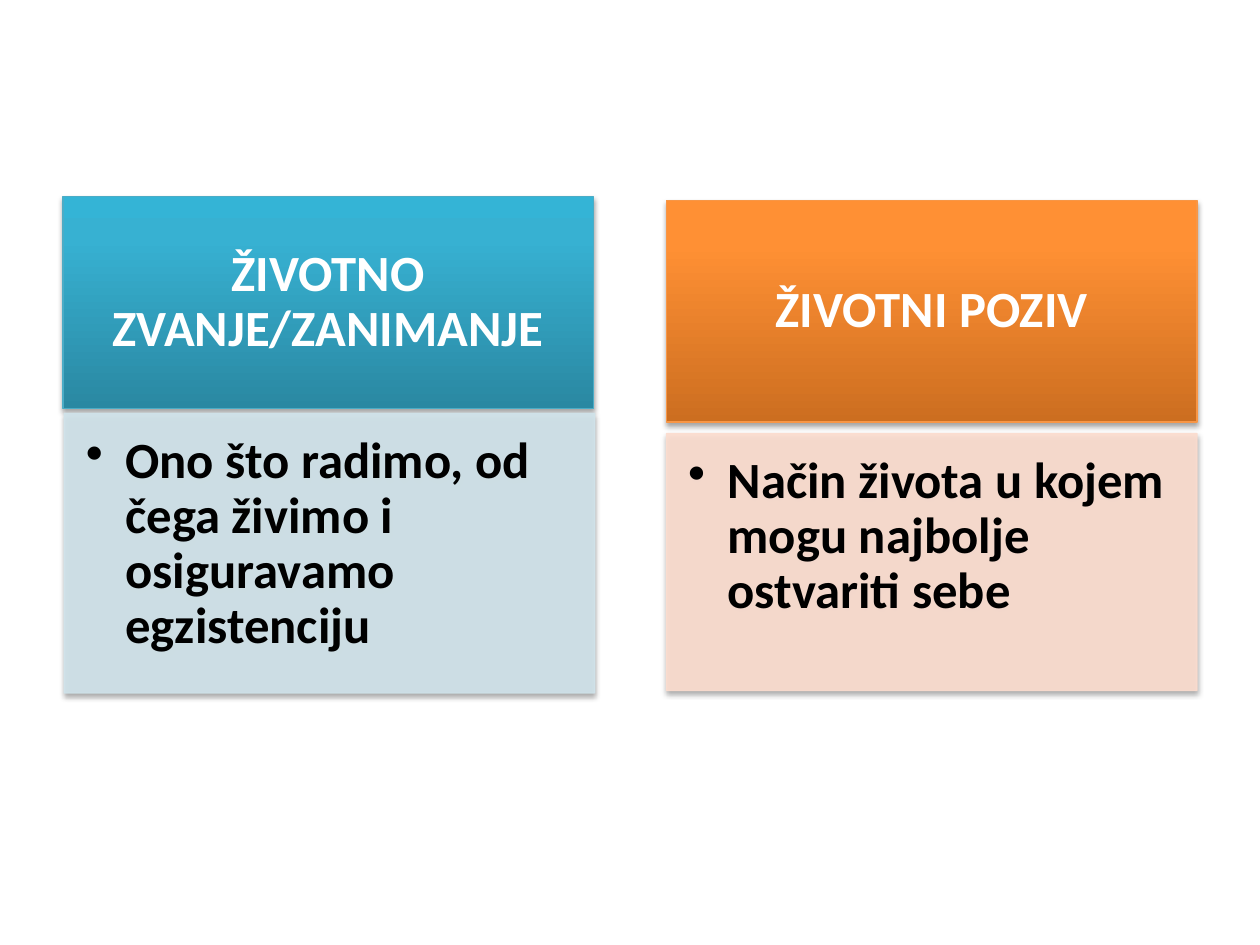
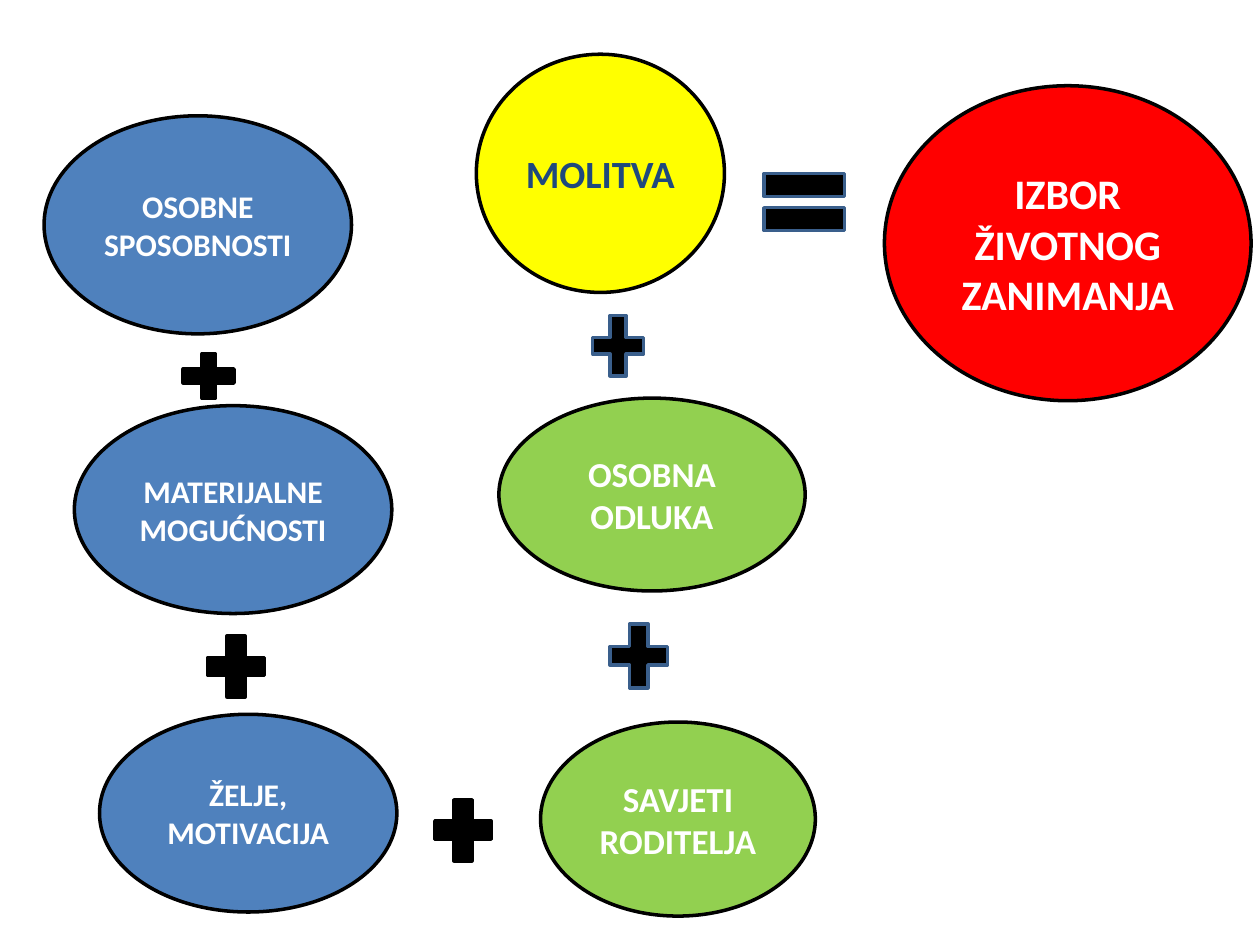
from pptx import Presentation
from pptx.dml.color import RGBColor
from pptx.enum.shapes import MSO_SHAPE
from pptx.enum.text import MSO_ANCHOR, PP_ALIGN
from pptx.oxml import parse_xml
from pptx.oxml.ns import nsdecls, qn
from pptx.util import Pt

RECTANGLE, OVAL = MSO_SHAPE.RECTANGLE, MSO_SHAPE.OVAL
PLUS, EQUAL = MSO_SHAPE.MATH_PLUS, MSO_SHAPE.MATH_EQUAL
TOP, MIDDLE = MSO_ANCHOR.TOP, MSO_ANCHOR.MIDDLE
LEFT, CENTER = PP_ALIGN.LEFT, PP_ALIGN.CENTER

FONT = "Calibri"
WHITE, BLACK, NAVY = "FFFFFF", "000000", "1F497D"
BLUE, GREEN, YELLOW, RED = "4F81BD", "92D050", "FFFF00", "FF0000"
SIGN_BLUE = "3A5F8C"


def color(value):
    return RGBColor.from_string(value)


def add_box(page, kind, place, fill, line, width, text="", size=18,
            ink=WHITE, align=CENTER, anchor=MIDDLE):
    box = page.shapes.add_shape(kind, *[Pt(length) for length in place])
    box.shadow.inherit = False
    box.fill.solid()
    box.fill.fore_color.rgb = color(fill)
    box.line.color.rgb = color(line)
    box.line.width = Pt(width)
    if text:
        frame = box.text_frame
        frame.word_wrap = True
        frame.vertical_anchor = anchor
        para = frame.paragraphs[0]
        para.alignment = align
        span = para.add_run()
        span.text = text
        span.font.color.rgb = color(ink)
        for name, value in {"name": FONT, "size": Pt(size), "bold": True}.items():
            setattr(span.font, name, value)
    return box


deck = Presentation()
deck.slide_width, deck.slide_height = Pt(720), Pt(540)
blank = deck.slide_layouts[6]

# Slide 1: two headed cards
page = deck.slides.add_slide(blank)
CARD_WIDTH = 303.1
HEADER_INSETS = {"margin_left": 16.5, "margin_top": 9.4,
                 "margin_right": 16.5, "margin_bottom": 9.4}
BODY_INSETS = {"margin_left": 12.4, "margin_top": 12.4,
               "margin_right": 16.5, "margin_bottom": 18.6}
cards = [
    {"header": (36, 112.3, CARD_WIDTH, 121), "body": (36.7, 236.2, CARD_WIDTH, 159.8),
     "title": "ŽIVOTNO ZVANJE/ZANIMANJE",
     "text": "Ono što radimo, od čega živimo i osiguravamo egzistenciju",
     "stops": ("2A88A2", "37B1D2", "34B4D6"), "line": "4BACC6", "tint": "D0E3EA"},
    {"header": (380.9, 114.5, CARD_WIDTH, 126.7), "body": (380.9, 247.7, CARD_WIDTH, 146.9),
     "title": "ŽIVOTNI POZIV",
     "text": "Način života u kojem mogu najbolje ostvariti sebe",
     "stops": ("CC6E20", "FF9034", "FF9136"), "line": "F79646", "tint": "FCDDCF"},
]
for card in cards:
    header = add_box(page, RECTANGLE, card["header"], card["stops"][0], card["line"],
                     0.75, card["title"], 29)
    body = add_box(page, RECTANGLE, card["body"], card["tint"], card["tint"],
                   0.75, card["text"], 29, BLACK, LEFT, TOP)

    # Insets, line spacing and soft shadow
    for box, insets in ((header, HEADER_INSETS), (body, BODY_INSETS)):
        for name, value in insets.items():
            setattr(box.text_frame, name, Pt(value))
        box.text_frame.paragraphs[0].line_spacing = 0.9
        box._element.spPr.find(qn("a:effectLst")).append(parse_xml(
            f'<a:outerShdw {nsdecls("a")} blurRad="{Pt(3.1)}" dist="{Pt(1.8)}" '
            'dir="5400000" rotWithShape="0"><a:srgbClr val="000000">'
            '<a:alpha val="35000"/></a:srgbClr></a:outerShdw>'))

    # Header gradient, dark at the bottom
    stops = "".join(f'<a:gs pos="{position}"><a:srgbClr val="{value}"/></a:gs>'
                    for position, value in zip((0, 80000, 100000), card["stops"]))
    properties = header._element.spPr
    properties.replace(properties.find(qn("a:solidFill")), parse_xml(
        f'<a:gradFill {nsdecls("a")} rotWithShape="1"><a:gsLst>{stops}</a:gsLst>'
        '<a:lin ang="16200000" scaled="0"/></a:gradFill>'))

    # Body transparency and bullet
    for tint in body._element.spPr.iter(qn("a:srgbClr")):
        if tint.get("val") == card["tint"]:
            tint.append(parse_xml(f'<a:alpha {nsdecls("a")} val="90000"/>'))
    bullet = body.text_frame.paragraphs[0]._p.get_or_add_pPr()
    bullet.set("marL", str(Pt(22.5)))
    bullet.set("indent", str(-Pt(22.5)))
    bullet.append(parse_xml(f'<a:buChar {nsdecls("a")} char="•"/>'))

# Slide 2: what adds up to the choice of an occupation
page = deck.slides.add_slide(blank)
factors = [
    ("OSOBNE SPOSOBNOSTI", (25.2, 66.2, 175.7, 124.6), BLUE, 18, WHITE),
    ("MATERIJALNE MOGUĆNOSTI", (42.5, 231.8, 181.4, 118.8), BLUE, 18, WHITE),
    ("ŽELJE, MOTIVACIJA", (56.9, 408.2, 169.9, 113), BLUE, 18, WHITE),
    ("SAVJETI RODITELJA", (308.9, 412.6, 157, 110.9), GREEN, 20, WHITE),
    ("OSOBNA ODLUKA", (285.1, 227.5, 175, 110.2), GREEN, 20, WHITE),
    ("MOLITVA", (272.2, 31, 141.8, 136.1), YELLOW, 22, NAVY),
    ("IZBOR ŽIVOTNOG ZANIMANJA", (505.4, 49, 209.5, 180), RED, 24, WHITE),
]
for text, place, fill, size, ink in factors:
    add_box(page, OVAL, place, fill, BLACK, 2, text, size, ink)

# Signs between the ovals
signs = [
    (PLUS, (99.4, 198, 39.6, 33.8), BLACK),
    (PLUS, (113, 357.1, 43.9, 47.5), BLACK),
    (PLUS, (242.6, 450.7, 43.9, 47.5), BLACK),
    (PLUS, (342.7, 349.9, 44.6, 49.7), SIGN_BLUE),
    (PLUS, (333.4, 174.2, 39.6, 46.8), SIGN_BLUE),
    (EQUAL, (428.4, 87.8, 62.6, 55.4), SIGN_BLUE),
]
for kind, place, line in signs:
    add_box(page, kind, place, BLACK, line, 2)

deck.save("out.pptx")
